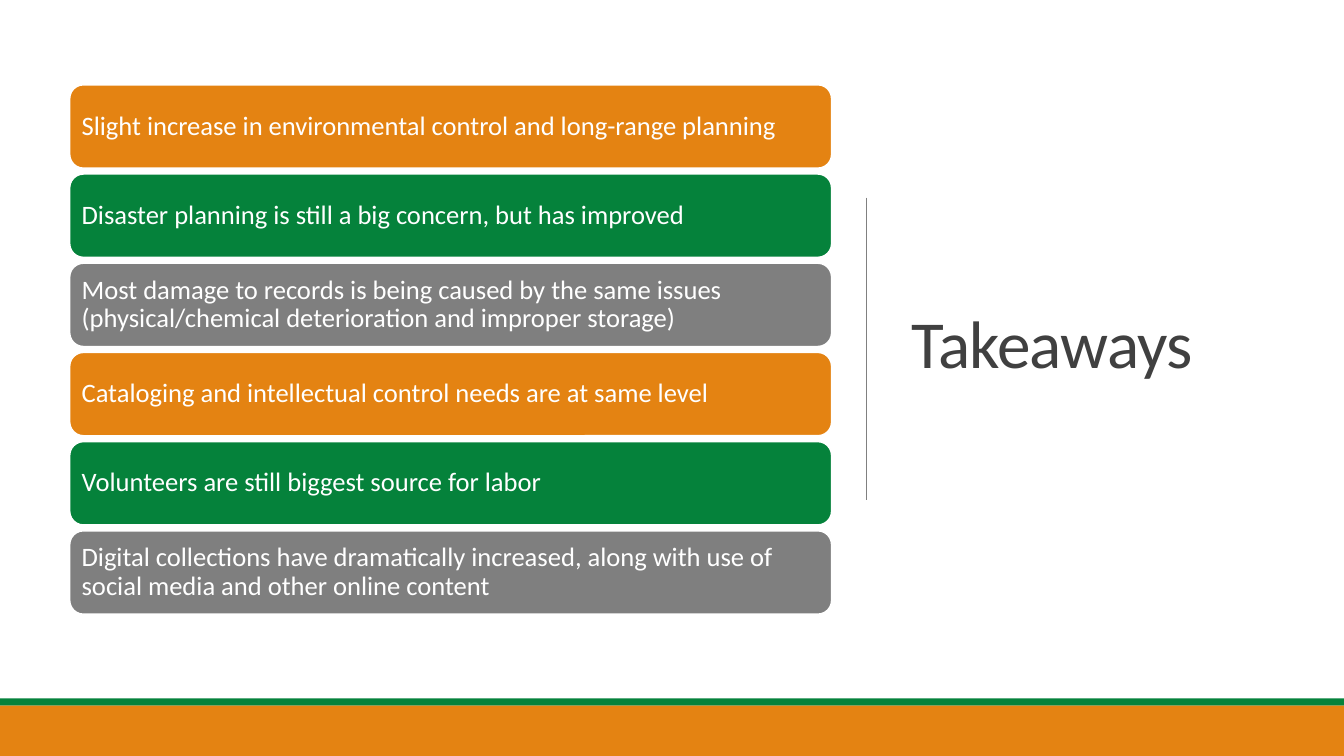
"""Build the Takeaways slide: six coloured bars beside a title."""
from pptx import Presentation
from pptx.dml.color import RGBColor
from pptx.enum.shapes import MSO_CONNECTOR, MSO_SHAPE
from pptx.enum.text import MSO_ANCHOR, PP_ALIGN
from pptx.util import Inches, Pt
from lxml.etree import SubElement
from pptx.oxml.ns import qn

TITLE = "Takeaways"
TAKEAWAYS = [
    "Slight increase in environmental control and long-range planning",
    "Disaster planning is still a big concern, but has improved",
    "Most damage to records is being caused by the same issues "
    "(physical/chemical deterioration and improper storage)",
    "Cataloging and intellectual control needs are at same level",
    "Volunteers are still biggest source for labor",
    "Digital collections have dramatically increased, along with use of "
    "social media and other online content",
]
ORANGE, GREEN, GRAY, WHITE = "E48312", "05823B", "7F7F7F", "FFFFFF"
BAR_COLORS = [ORANGE, GREEN, GRAY]
FOOTER_BANDS = [(6.93, 0.07, GREEN), (7, 0.5, ORANGE)]
BAR_LEFT, BAR_TOP, BAR_WIDTH, BAR_HEIGHT = 0.69, 0.84, 7.56, 0.83
BAR_STEP = 0.885
FONT = "Calibri"


def color(hex_value):
    return RGBColor.from_string(hex_value)


def add_block(slide, kind, left, top, width, height, fill):
    shape = slide.shapes.add_shape(
        kind, Inches(left), Inches(top), Inches(width), Inches(height))
    shape.shadow.inherit = False
    shape.fill.solid()
    shape.fill.fore_color.rgb = color(fill)
    shape.line.fill.background()
    return shape


def write(shape, text, size, hex_value, line_spacing):
    frame = shape.text_frame
    frame.word_wrap = True
    frame.vertical_anchor = MSO_ANCHOR.MIDDLE
    frame.text = text
    paragraph = frame.paragraphs[0]
    paragraph.alignment = PP_ALIGN.LEFT
    paragraph.line_spacing = line_spacing
    run = paragraph.runs[0]
    run.font.name = FONT
    run.font.size = Pt(size)
    run.font.color.rgb = color(hex_value)
    return run


def add_title(slide):
    box = slide.shapes.add_textbox(
        Inches(8.94), Inches(0.69), Inches(3.69), Inches(5.53))
    run = write(box, TITLE, 48, "404040", 0.85)
    run.font._element.set("spc", "-50")


def add_divider(slide):
    divider = slide.shapes.add_connector(
        MSO_CONNECTOR.STRAIGHT, Inches(8.59), Inches(1.96), Inches(8.59), Inches(4.96))
    divider.line.color.rgb = color("808080")
    divider.line.width = Pt(0.5)
    SubElement(divider._element.spPr, qn("a:effectLst"))


def add_bars(slide):
    for index, text in enumerate(TAKEAWAYS):
        bar = add_block(slide, MSO_SHAPE.ROUNDED_RECTANGLE, BAR_LEFT,
                        BAR_TOP + index * BAR_STEP, BAR_WIDTH, BAR_HEIGHT,
                        BAR_COLORS[index % len(BAR_COLORS)])
        bar.line.color.rgb = color(WHITE)
        bar.line.width = Pt(1.25)
        frame = bar.text_frame
        frame.margin_left = frame.margin_right = Inches(0.08)
        frame.margin_top = frame.margin_bottom = Inches(0.08)
        write(bar, text, 19, WHITE, 0.9)


def main():
    presentation = Presentation()
    presentation.slide_width = Inches(13.33)
    presentation.slide_height = Inches(7.5)
    slide = presentation.slides.add_slide(presentation.slide_layouts[6])
    add_title(slide)
    add_divider(slide)
    for top, height, fill in FOOTER_BANDS:
        add_block(slide, MSO_SHAPE.RECTANGLE, 0, top, 13.33, height, fill)
    add_bars(slide)
    presentation.save("out.pptx")


if __name__ == "__main__":
    main()
